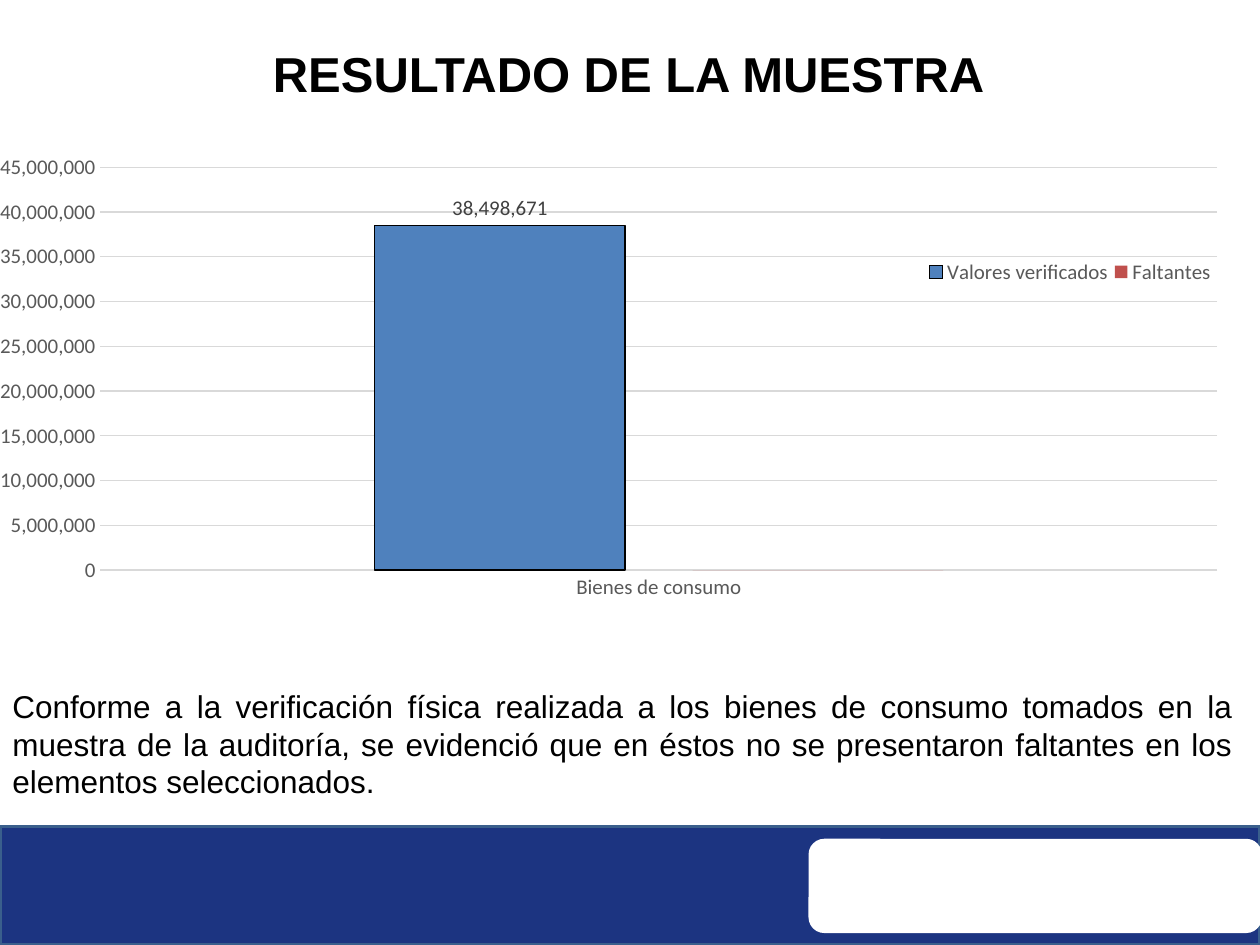
from lxml import etree
from pptx import Presentation
from pptx.chart.data import CategoryChartData
from pptx.dml.color import RGBColor
from pptx.enum.chart import XL_CHART_TYPE, XL_LABEL_POSITION, XL_LEGEND_POSITION, XL_TICK_MARK
from pptx.enum.shapes import MSO_SHAPE
from pptx.enum.text import MSO_ANCHOR, PP_ALIGN
from pptx.oxml.ns import qn
from pptx.util import Cm, Pt

GRID_COLOUR = "D9D9D9"
AXIS_TEXT = "595959"


def colour(hex_string):
    return RGBColor.from_string(hex_string)


def format_font(font, name, size, hex_string, bold=False):
    font.name = name
    font.size = Pt(size)
    font.bold = bold
    font.color.rgb = colour(hex_string)


def format_line(line, hex_string, width):
    line.color.rgb = colour(hex_string)
    line.width = Pt(width)


def fill_solid(fill, hex_string):
    fill.solid()
    fill.fore_color.rgb = colour(hex_string)


def add_panel(slide, kind, left, top, width, height, fill):
    shape = slide.shapes.add_shape(kind, Cm(left), Cm(top), Cm(width), Cm(height))
    shape.shadow.inherit = False
    fill_solid(shape.fill, fill)
    shape.line.fill.background()
    return shape


def add_footer(slide, left, top, width, height):
    band = add_panel(slide, MSO_SHAPE.RECTANGLE, left, top, width, height, "1C3481")
    format_line(band.line, "3A5F8C", 2)
    add_panel(slide, MSO_SHAPE.ROUNDED_RECTANGLE, left + 16.3, top + 0.25, 9.14, 1.9, "FFFFFF")


def set_title(slide, left, top, width, height):
    title = slide.shapes.title
    title.left, title.top, title.width, title.height = Cm(left), Cm(top), Cm(width), Cm(height)
    fill_solid(title.fill, "FFFFFF")
    title.text_frame.text = "RESULTADO DE LA MUESTRA"
    title.text_frame.vertical_anchor = MSO_ANCHOR.MIDDLE
    paragraph = title.text_frame.paragraphs[0]
    paragraph.alignment = PP_ALIGN.CENTER
    format_font(paragraph.font, "Arial", 28, "000000", bold=True)


def set_layout(parent, successors, x, y, w, h, inner=False):
    for old_layout in parent.findall(qn("c:layout")):
        parent.remove(old_layout)
    layout = etree.Element(qn("c:layout"))
    manual = etree.SubElement(layout, qn("c:manualLayout"))
    settings = [("layoutTarget", "inner")] if inner else []
    settings += [("xMode", "edge"), ("yMode", "edge"), ("x", x), ("y", y), ("w", w), ("h", h)]
    for tag, value in settings:
        etree.SubElement(manual, qn(f"c:{tag}")).set("val", str(value))
    next(child for child in parent if child.tag in successors).addprevious(layout)


def format_axis(axis):
    axis.major_tick_mark = XL_TICK_MARK.NONE
    axis.minor_tick_mark = XL_TICK_MARK.NONE
    format_font(axis.tick_labels.font, "Calibri", 12, AXIS_TEXT)


def add_result_chart(slide, left, top, width, height):
    data = CategoryChartData(number_format="#,##0")
    data.categories = ["Bienes de consumo"]
    data.add_series("Valores verificados", [38498671])
    data.add_series("Faltantes", [0])
    chart = slide.shapes.add_chart(
        XL_CHART_TYPE.COLUMN_CLUSTERED, Cm(left), Cm(top), Cm(width), Cm(height), data
    ).chart
    format_font(chart.font, "Calibri", 10, "000000")
    chart.has_title = False

    format_axis(chart.category_axis)
    format_line(chart.category_axis.format.line, GRID_COLOUR, 0.75)
    value_axis = chart.value_axis
    format_axis(value_axis)
    value_axis.minimum_scale, value_axis.maximum_scale = 0, 45000000
    value_axis.major_unit = 5000000
    value_axis.tick_labels.number_format = "#,##0"
    value_axis.tick_labels.number_format_is_linked = False
    value_axis.format.line.fill.background()
    format_line(value_axis.major_gridlines.format.line, GRID_COLOUR, 0.75)

    plot = chart.plots[0]
    plot.gap_width, plot.overlap = 219, -27
    plot.vary_by_categories = False
    for series, fill in zip(plot.series, ["4F81BD", "C0504D"]):
        fill_solid(series.format.fill, fill)
    verified = plot.series[0]
    format_line(verified.format.line, "000000", 0.75)
    labels = verified.data_labels
    labels.show_value = True
    labels.number_format = "#,##0"
    labels.number_format_is_linked = False
    labels.position = XL_LABEL_POSITION.OUTSIDE_END
    format_font(labels.font, "Calibri", 12, "404040")

    chart.has_legend = True
    legend = chart.legend
    legend.position = XL_LEGEND_POSITION.RIGHT
    legend.include_in_layout = False
    format_font(legend.font, "Calibri", 12, AXIS_TEXT)
    set_layout(legend._element, [qn("c:overlay")], 0.75, 0.18, 0.24, 0.08)
    plot_area = chart._chartSpace.chart.plotArea
    set_layout(plot_area, [qn("c:barChart")], 0.08, 0.02, 0.91, 0.77, inner=True)


def add_conclusion(slide, left, top, width, height):
    frame = slide.shapes.add_textbox(Cm(left), Cm(top), Cm(width), Cm(height)).text_frame
    frame.word_wrap = True
    frame.text = (
        "Conforme a la verificación física realizada a los bienes de consumo tomados "
        "en la muestra de la auditoría, se evidenció que en éstos no se presentaron "
        "faltantes en los elementos seleccionados."
    )
    paragraph = frame.paragraphs[0]
    paragraph.alignment = PP_ALIGN.JUSTIFY
    format_font(paragraph.font, "Arial", 18, "000000")


def main():
    presentation = Presentation()
    presentation.slide_width, presentation.slide_height = Cm(25.4), Cm(19.05)
    slide = presentation.slides.add_slide(presentation.slide_layouts[5])
    add_footer(slide, 0, 16.66, 25.4, 2.39)
    set_title(slide, -0.03, 0.74, 25.4, 1.45)
    add_result_chart(slide, 0, 3.12, 24.79, 10.59)
    add_conclusion(slide, 0, 13.72, 25.1, 2.57)
    presentation.save("out.pptx")


if __name__ == "__main__":
    main()
